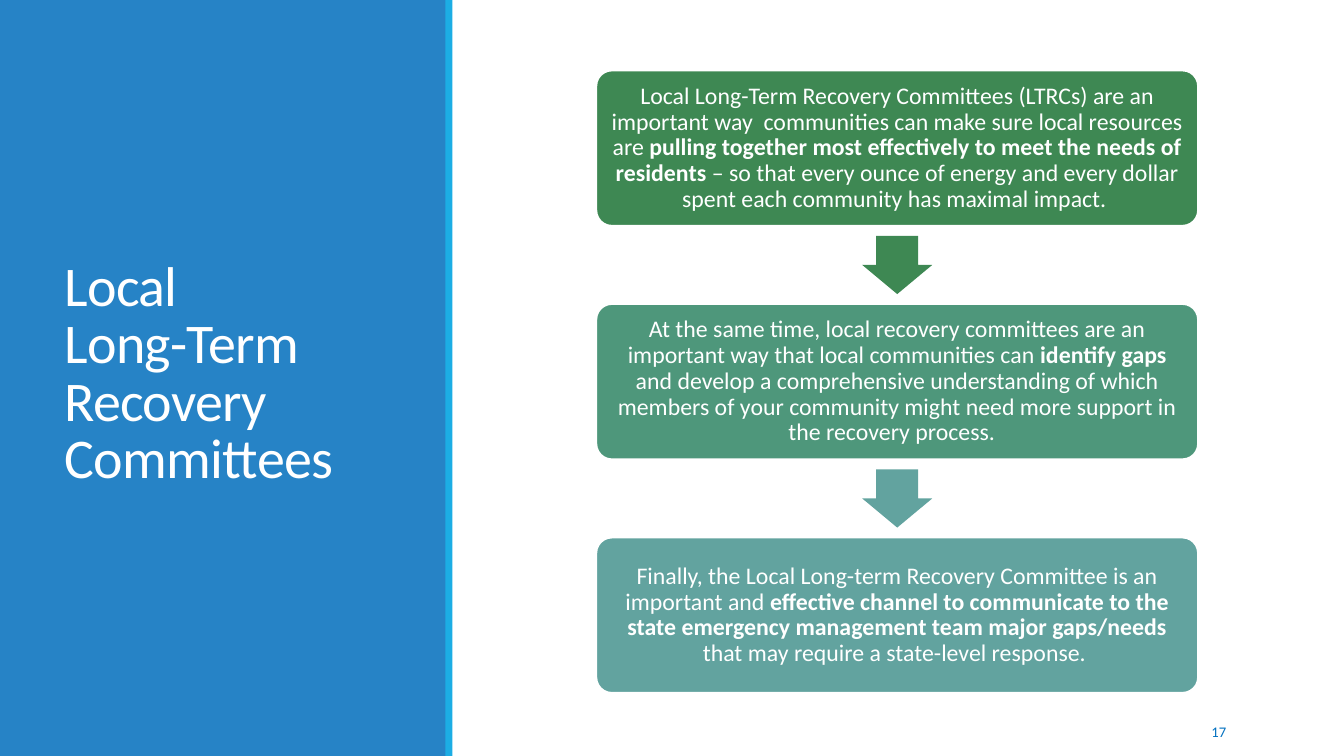
from pptx import Presentation
from pptx.dml.color import RGBColor as RGB
from pptx.enum.shapes import MSO_SHAPE as Shape
from pptx.enum.text import MSO_ANCHOR as Anchor, MSO_AUTO_SIZE as Auto, PP_ALIGN as Align
from pptx.util import Pt

FONT = "Calibri"
COLORS = {"panel": "2683C6", "stripe": "1CADE4", "number": "0070C0", "white": "FFFFFF",
          "green": "3E8853", "jade": "4E977B", "teal": "62A39F"}
TITLE = "Local \vLong-Term Recovery Committees"
NUMBER = "17"
STEPS = [
    ("green", [
        ("Local Long-Term Recovery Committees (LTRCs) are an important way  communities can make sure local resources are ", False),
        ("pulling together most effectively to meet the needs of residents ", True),
        ("– so that every ounce of energy and every dollar spent each community has maximal impact. ", False)]),
    ("jade", [
        ("At the same time, local recovery committees are an important way that local communities can ", False),
        ("identify gaps", True),
        (" and develop a comprehensive understanding of which members of your community might need more support in the recovery process.  ", False)]),
    ("teal", [
        ("Finally, the Local Long-term Recovery Committee is an important and ", False),
        ("effective channel to communicate to the state emergency management team major gaps/needs ", True),
        ("that may require a state-level response. ", False)]),
]
ARROWS = ["green", "teal"]

WIDE, HIGH = 960, 540
LEFT, TOP, BOX_W, BOX_H, PITCH = 426, 50.4, 429.8, 110.9, 166.8
ARROW_W, ARROW_H = 50, 41.6
INSET = 5.1


def color(name):
    return RGB.from_string(COLORS[name])


def draw(slide, kind, fill, x, y, w, h):
    shape = slide.shapes.add_shape(kind, Pt(x), Pt(y), Pt(w), Pt(h))
    shape.shadow.inherit = False
    shape.fill.solid()
    shape.fill.fore_color.rgb = color(fill)
    shape.line.fill.background()
    return shape


def style(run, size, tint, bold=False):
    run.font.name = FONT
    run.font.size = Pt(size)
    run.font.bold = bold
    run.font.color.rgb = color(tint)


def add_step(slide, y, fill, parts):
    box = draw(slide, Shape.ROUNDED_RECTANGLE, fill, LEFT, y, BOX_W, BOX_H)
    box.adjustments[0] = 0.1
    box.line.color.rgb = color("white")
    box.line.width = Pt(1.25)
    frame = box.text_frame
    frame.word_wrap = True
    frame.vertical_anchor = Anchor.MIDDLE
    frame.margin_left = frame.margin_right = Pt(INSET)
    frame.margin_top = frame.margin_bottom = Pt(INSET)
    para = frame.paragraphs[0]
    para.alignment = Align.CENTER
    para.line_spacing = 0.9
    for text, bold in parts:
        run = para.add_run()
        run.text = text
        style(run, 17, "white", bold)


def add_arrow(slide, y, fill):
    x = LEFT + (BOX_W - ARROW_W) / 2
    arrow = draw(slide, Shape.DOWN_ARROW, fill, x, y, ARROW_W, ARROW_H)
    arrow.adjustments[0] = 0.6
    arrow.adjustments[1] = 0.5


def set_title(slide):
    title = slide.shapes.title
    title.left, title.top, title.width, title.height = Pt(39), Pt(41), Pt(242.6), Pt(454.3)
    title.element.getparent().append(title.element)
    frame = title.text_frame
    frame.text = TITLE
    frame.word_wrap = True
    frame.auto_size = Auto.NONE
    frame.vertical_anchor = Anchor.MIDDLE
    para = frame.paragraphs[0]
    para.alignment = Align.LEFT
    para.line_spacing = 0.85
    for run in para.runs:
        style(run, 40, "white")
        run.font._element.set("spc", "-50")


def add_number(slide):
    frame = slide.shapes.add_textbox(Pt(780), Pt(508.5), Pt(103), Pt(28.8)).text_frame
    frame.text = NUMBER
    frame.word_wrap = True
    frame.vertical_anchor = Anchor.MIDDLE
    para = frame.paragraphs[0]
    para.alignment = Align.RIGHT
    style(para.runs[0], 10.5, "number")


def main():
    deck = Presentation()
    deck.slide_width, deck.slide_height = Pt(WIDE), Pt(HIGH)
    slide = deck.slides.add_slide(deck.slide_layouts[5])
    draw(slide, Shape.RECTANGLE, "panel", 0, 0, 319, HIGH)
    draw(slide, Shape.RECTANGLE, "stripe", 318.2, 0, 5, HIGH)
    add_number(slide)
    for i, (fill, parts) in enumerate(STEPS):
        add_step(slide, TOP + i * PITCH, fill, parts)
    gap = PITCH - BOX_H
    for i, fill in enumerate(ARROWS):
        add_arrow(slide, TOP + i * PITCH + BOX_H + (gap - ARROW_H) / 2, fill)
    set_title(slide)
    deck.save("out.pptx")


if __name__ == "__main__":
    main()
